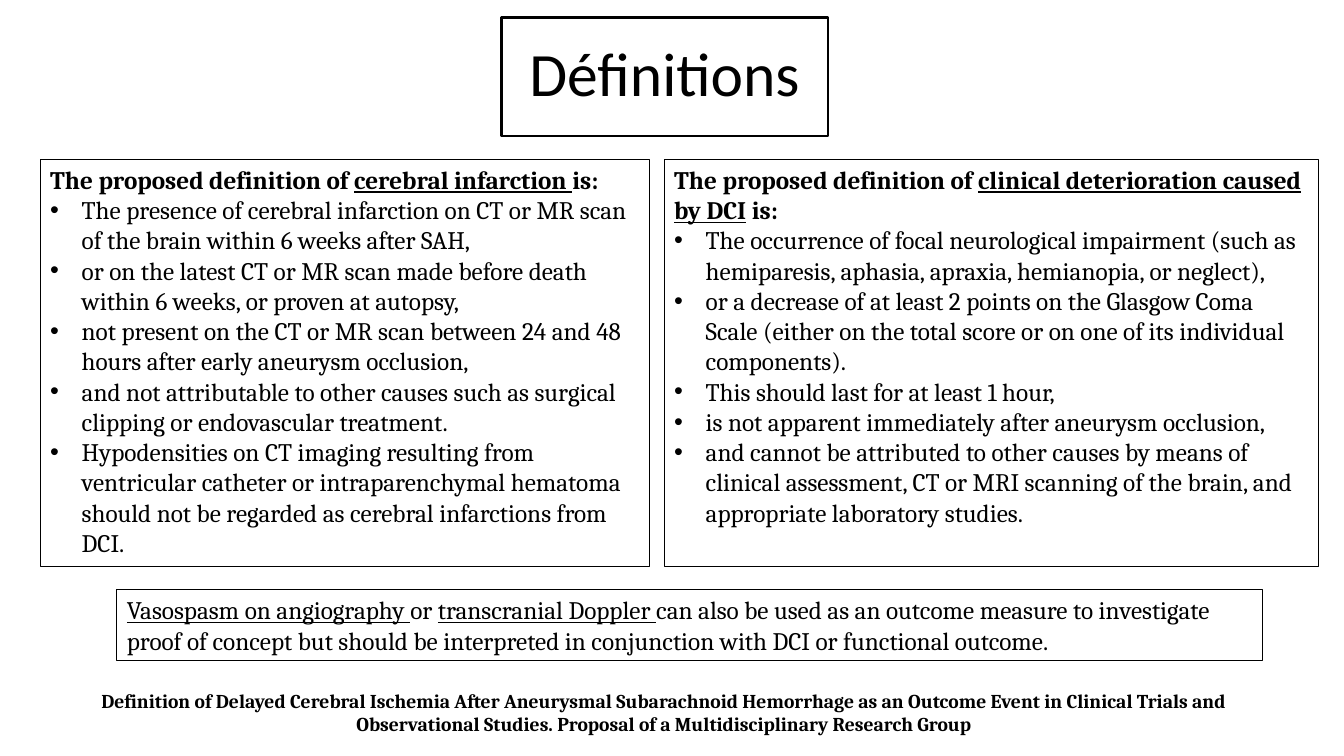
from lxml.etree import SubElement
from pptx import Presentation
from pptx.dml.color import RGBColor
from pptx.enum.text import MSO_ANCHOR, PP_ALIGN
from pptx.oxml.ns import qn
from pptx.util import Pt

BLACK = "000000"
BULLET_INDENT = 22.5
COLUMN_TOP, COLUMN_HEIGHT = 113.8, 290.9

TITLE = "Définitions"
# Spans are (text, underlined) pairs.
COLUMNS = [
    {
        "left": 28.8,
        "width": 434.9,
        "heading": [
            ("The proposed definition of ", False),
            ("cerebral infarction ", True),
            ("is:", False),
        ],
        "bullets": [
            "The presence of cerebral infarction on CT or MR scan of the brain within 6 weeks after SAH,",
            "or on the latest CT or MR scan made before death within 6 weeks, or proven at autopsy,",
            "not present on the CT or MR scan between 24 and 48 hours after early aneurysm occlusion,",
            "and not attributable to other causes such as surgical clipping or endovascular treatment.",
            "Hypodensities on CT imaging resulting from ventricular catheter or intraparenchymal "
            "hematoma should not be regarded as cerebral infarctions from DCI.",
        ],
    },
    {
        "left": 474.5,
        "width": 467.3,
        "heading": [
            ("The proposed definition of ", False),
            ("clinical deterioration caused by DCI", True),
            (" is:", False),
        ],
        "bullets": [
            "The occurrence of focal neurological impairment (such as hemiparesis, aphasia, apraxia, "
            "hemianopia, or neglect),",
            "or a decrease of at least 2 points on the Glasgow Coma Scale (either on the total score "
            "or on one of its individual components).",
            "This should last for at least 1 hour,",
            "is not apparent immediately after aneurysm occlusion,",
            "and cannot be attributed to other causes by means of clinical assessment, CT or MRI "
            "scanning of the brain, and appropriate laboratory studies.",
        ],
    },
]
OUTCOME_NOTE = [
    ("Vasospasm on angiography ", True),
    ("or ", False),
    ("transcranial Doppler ", True),
    ("can also be used as an outcome measure to investigate proof of concept but should be "
     "interpreted in conjunction with DCI or functional outcome.", False),
]
CITATION = (
    "Definition of Delayed Cerebral Ischemia After Aneurysmal Subarachnoid Hemorrhage as an "
    "Outcome Event in Clinical Trials and Observational Studies. Proposal of a "
    "Multidisciplinary Research Group"
)


def color(value):
    return RGBColor.from_string(value)


def add_box(page, left, top, width, height, border=None, anchor=MSO_ANCHOR.TOP):
    """Add a wrapping text box, outlined when a border width is given."""
    box = page.shapes.add_textbox(Pt(left), Pt(top), Pt(width), Pt(height))
    box.text_frame.word_wrap = True
    box.text_frame.vertical_anchor = anchor
    if border:
        box.line.color.rgb = color(BLACK)
        box.line.width = Pt(border)
    return box.text_frame


def write(para, spans, size=18, font="Cambria", bold=False, align=PP_ALIGN.LEFT, bullet=False):
    """Fill a paragraph with plain text or (text, underlined) spans."""
    para.alignment = align
    if bullet:
        properties = para._p.get_or_add_pPr()
        properties.set("marL", str(Pt(BULLET_INDENT)))
        properties.set("indent", str(-Pt(BULLET_INDENT)))
        SubElement(properties, qn("a:buFont"), typeface="Arial")
        SubElement(properties, qn("a:buChar"), char="•")
    for text, underlined in [(spans, False)] if isinstance(spans, str) else spans:
        span = para.add_run()
        span.text = text
        span.font.size = Pt(size)
        span.font.name = font
        span.font.bold = bold
        span.font.underline = underlined
        span.font.color.rgb = color(BLACK)


def main():
    deck = Presentation()
    deck.slide_width, deck.slide_height = Pt(960), Pt(540)
    page = deck.slides.add_slide(deck.slide_layouts[6])

    title = add_box(page, 358, 12.6, 233.5, 84.5, border=2, anchor=MSO_ANCHOR.MIDDLE)
    title.paragraphs[0].line_spacing = 0.9
    write(title.paragraphs[0], TITLE, size=44, font="Calibri", align=PP_ALIGN.CENTER)

    for column in COLUMNS:
        frame = add_box(page, column["left"], COLUMN_TOP, column["width"], COLUMN_HEIGHT, border=0.75)
        write(frame.paragraphs[0], column["heading"], bold=True)
        for bullet in column["bullets"]:
            write(frame.add_paragraph(), bullet, bullet=True)

    note = add_box(page, 83.5, 421.2, 818, 50.9, border=0.75)
    write(note.paragraphs[0], OUTCOME_NOTE)

    citation = add_box(page, 21.6, 488.2, 905.8, 41.2)
    write(citation.paragraphs[0], CITATION, size=14, bold=True, align=PP_ALIGN.CENTER)

    deck.save("out.pptx")


if __name__ == "__main__":
    main()
